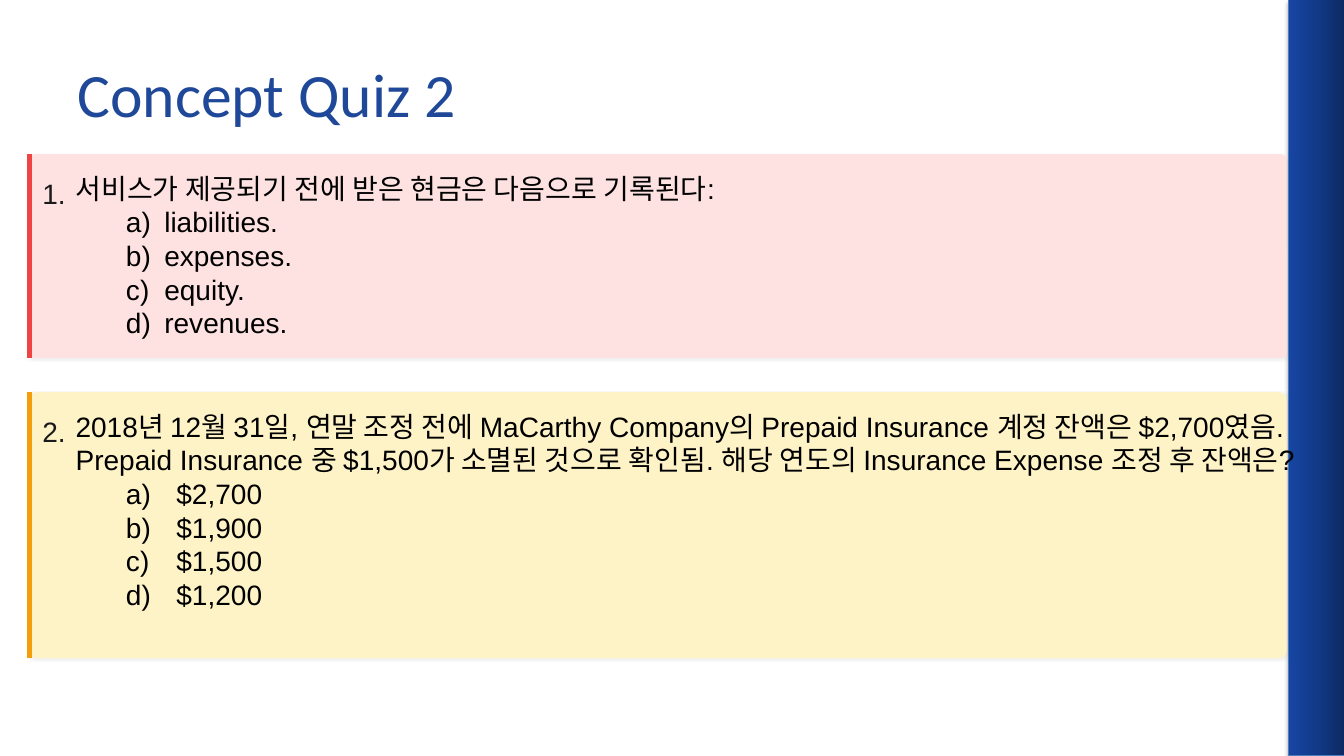
from copy import deepcopy

from pptx import Presentation
from pptx.dml.color import RGBColor
from pptx.enum.shapes import MSO_CONNECTOR, MSO_SHAPE
from pptx.enum.text import MSO_ANCHOR
from pptx.oxml.ns import qn
from pptx.oxml.xmlchemy import OxmlElement
from pptx.util import Inches, Pt

RECTANGLE = MSO_SHAPE.RECTANGLE
ROUNDED = MSO_SHAPE.ROUNDED_RECTANGLE
STRAIGHT = MSO_CONNECTOR.STRAIGHT
MIDDLE = MSO_ANCHOR.MIDDLE

CARD_LEFT, CARD_WIDTH = 0.29, 12.47
NUMBER_LEFT, QUESTION_LEFT = 0.42, 0.75
SIDEBAR_STOPS = [(0, "0D2960"), (0.5, "123A89"), (1, "1645A2")]
TITLE_FONT = {"name": "Calibri", "size": Pt(44)}
BODY_FONT = {"name": "Arial", "size": Pt(20)}
NO_MARGINS = dict.fromkeys(
    ("margin_left", "margin_top", "margin_right", "margin_bottom"), 0)
NUMBER_SPACING = {"line_spacing": Pt(28), "space_after": Pt(4)}

QUIZ = [
    {"number": "1.", "top": 1.53, "height": 2.02, "corner": 0.024,
     "fill": "FEE2E2", "accent": "EF4444", "text_width": 12.14,
     "indent": 0.88, "hanging": 0.38,
     "question": "서비스가 제공되기 전에 받은 현금은 다음으로 기록된다:",
     "answers": ["liabilities.", "expenses.", "equity.", "revenues."]},
    {"number": "2.", "top": 3.89, "height": 2.64, "corner": 0.028,
     "fill": "FEF3C7", "accent": "F59E0B", "text_width": 12,
     "indent": 1, "hanging": 0.5,
     "question": "2018년 12월 31일, 연말 조정 전에 MaCarthy Company의 "
                 "Prepaid Insurance 계정 잔액은 $2,700였음. Prepaid Insurance 중 "
                 "$1,500가 소멸된 것으로 확인됨. 해당 연도의 Insurance Expense "
                 "조정 후 잔액은?",
     "answers": ["$2,700", "$1,900", "$1,500", "$1,200"]},
]


def color(hex_value):
    """Return the colour for a hex string."""
    return RGBColor.from_string(hex_value)


def apply_format(target, values):
    """Set each attribute of the target from a dict."""
    for name, value in values.items():
        setattr(target, name, value)


def add_shadow(shape, opacity, blur, distance):
    """Give a shape a black shadow that falls straight down."""
    shape.shadow.inherit = False
    effects = shape._element.spPr.find(qn("a:effectLst"))
    shadow = OxmlElement("a:outerShdw")
    for name, value in {"blurRad": Pt(blur), "dist": Pt(distance),
                        "dir": 90 * 60000, "rotWithShape": 0}.items():
        shadow.set(name, str(int(value)))
    black = OxmlElement("a:srgbClr")
    black.set("val", "000000")
    alpha = OxmlElement("a:alpha")
    alpha.set("val", str(opacity * 1000))
    black.append(alpha)
    shadow.append(black)
    effects.append(shadow)


def add_sidebar(slide):
    """Draw the gradient band along the right edge."""
    sidebar = slide.shapes.add_shape(
        RECTANGLE, Inches(12.78), 0, Inches(0.56), Inches(7.5))
    sidebar.fill.gradient()
    sidebar.fill.gradient_angle = 180
    stop_list = sidebar._element.spPr.find(".//" + qn("a:gsLst"))
    stop_list.append(deepcopy(stop_list[0]))
    for stop, (position, shade) in zip(sidebar.fill.gradient_stops, SIDEBAR_STOPS):
        stop.position = position
        stop.color.rgb = color(shade)
    sidebar.line.color.rgb = color("4B7EBC")
    sidebar.line.width = Pt(0.75)
    add_shadow(sidebar, 35, 3.1, 1.8)


def add_text_frame(slide, left, top, width, height, frame_format):
    """Add a wrapping text box and return its frame."""
    box = slide.shapes.add_textbox(*map(Inches, (left, top, width, height)))
    frame = box.text_frame
    apply_format(frame, {"word_wrap": True, **frame_format})
    return frame


def write(paragraph, text, font_format, shade):
    """Write one formatted run in a paragraph."""
    run = paragraph.add_run()
    run.text = text
    apply_format(run.font, font_format)
    run.font.color.rgb = color(shade)


def add_lettering(paragraph, indent, hanging):
    """Letter a paragraph a), b), c) with a hanging indent."""
    paragraph.level = 1
    properties = paragraph._p.get_or_add_pPr()
    properties.set("marL", str(Inches(indent)))
    properties.set("indent", str(-Inches(hanging)))
    lettering = OxmlElement("a:buAutoNum")
    lettering.set("type", "alphaLcParenR")
    properties.append(lettering)


def add_card(slide, top, height, corner, fill, accent):
    """Draw a question's panel and its accent line."""
    card = slide.shapes.add_shape(
        ROUNDED, *map(Inches, (CARD_LEFT, top, CARD_WIDTH, height)))
    card.adjustments[0] = corner
    card.fill.solid()
    card.fill.fore_color.rgb = color(fill)
    card.line.fill.background()
    add_shadow(card, 8, 1.5, 0.8)
    edge = slide.shapes.add_connector(
        STRAIGHT, *map(Inches, (CARD_LEFT, top, CARD_LEFT, top + height)))
    edge.line.color.rgb = color(accent)
    edge.line.width = Pt(3.75)
    edge._element.spPr.append(OxmlElement("a:effectLst"))


def add_question(slide, item):
    """Add one numbered question with its lettered answers."""
    top, height = item["top"], item["height"]
    add_card(slide, top, height, item["corner"], item["fill"], item["accent"])

    text_top = top + 0.17
    number = add_text_frame(
        slide, NUMBER_LEFT, text_top, 0.24, 0.39, NO_MARGINS).paragraphs[0]
    apply_format(number, NUMBER_SPACING)
    write(number, item["number"], BODY_FONT, "1A1A1A")

    body = add_text_frame(slide, QUESTION_LEFT, text_top, item["text_width"],
                          height - 0.5, NO_MARGINS)
    write(body.paragraphs[0], item["question"], BODY_FONT, "000000")
    for answer in item["answers"]:
        choice = body.add_paragraph()
        add_lettering(choice, item["indent"], item["hanging"])
        write(choice, answer, BODY_FONT, "000000")


def main():
    """Build and save the quiz slide."""
    deck = Presentation()
    apply_format(deck, {"slide_width": Inches(13.33), "slide_height": Inches(7.5)})
    slide = deck.slides.add_slide(deck.slide_layouts[6])
    add_sidebar(slide)
    title = add_text_frame(slide, 0.67, 0.3, 12, 1.25, {"vertical_anchor": MIDDLE})
    write(title.paragraphs[0], "Concept Quiz 2", TITLE_FONT, "1F4899")
    for item in QUIZ:
        add_question(slide, item)
    deck.save("out.pptx")


if __name__ == "__main__":
    main()
